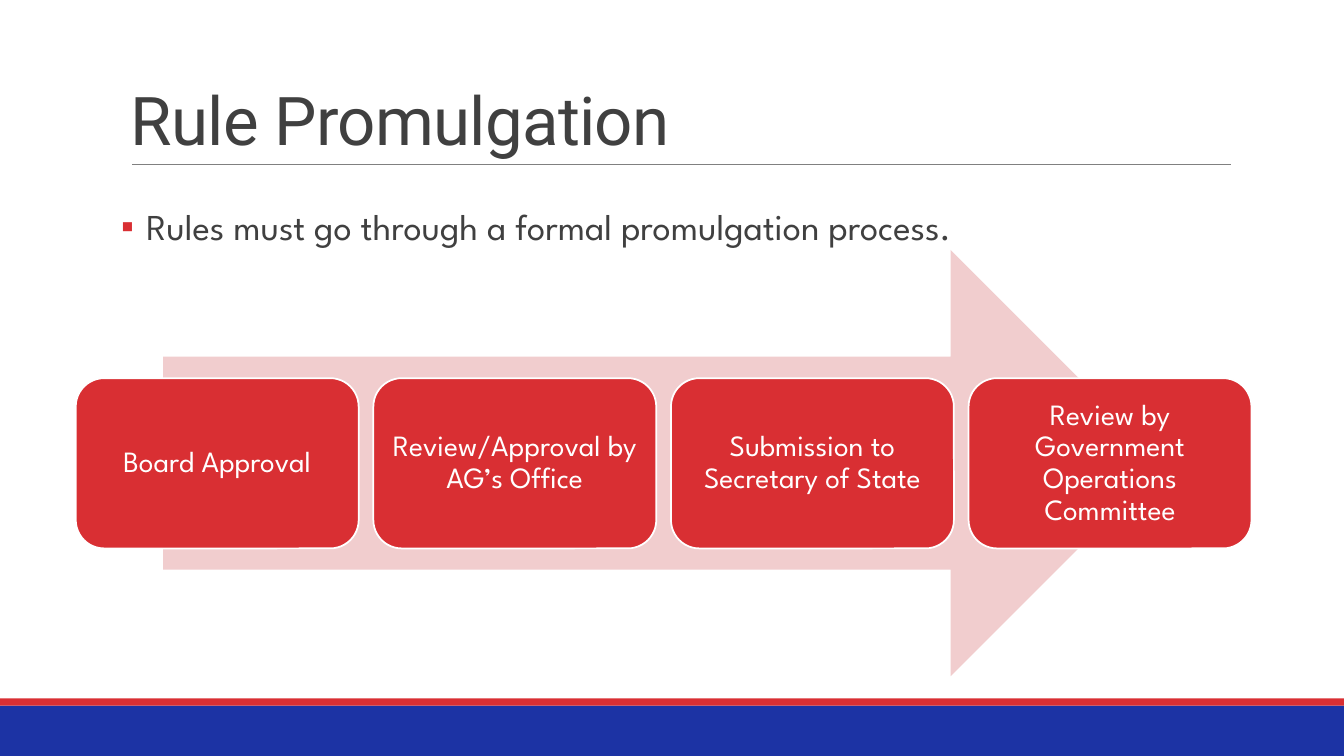
from dataclasses import dataclass

from lxml import etree
from pptx import Presentation
from pptx import util as u
from pptx.dml.color import RGBColor
from pptx.enum import shapes, text
from pptx.oxml import ns


@dataclass(frozen=True)
class Theme:
    """Colours, fonts and type sizes of the deck."""
    blue: str = "1C33A4"
    red: str = "D92F33"
    pale_red: str = "F1CDCE"
    grey: str = "808080"
    ink: str = "404040"
    white: str = "FFFFFF"
    heading_font: str = "Roboto"
    body_font: str = "League Spartan"
    title_size: float = 48
    body_size: float = 26
    step_size: float = 21


def write_text(shape, words, *, font, size, color, align=text.PP_ALIGN.LEFT,
               anchor=text.MSO_ANCHOR.TOP, spacing=0.9, before=0, after=0,
               inset=(0.25, 0.13), tracking=None):
    """Fill a shape with one formatted paragraph and return the paragraph."""
    frame = shape.text_frame
    frame.word_wrap = True
    frame.auto_size = text.MSO_AUTO_SIZE.NONE
    frame.vertical_anchor = anchor
    frame.margin_left = frame.margin_right = u.Cm(inset[0])
    frame.margin_top = frame.margin_bottom = u.Cm(inset[1])
    para = frame.paragraphs[0]
    para.alignment = align
    para.line_spacing = spacing
    para.space_before, para.space_after = u.Pt(before), u.Pt(after)
    span = para.add_run()
    span.text = words
    span.font.name, span.font.size = font, u.Pt(size)
    span.font.color.rgb = RGBColor.from_string(color)
    if tracking is not None:
        span.font._element.set("spc", str(round(tracking * 100)))
    return para


class SlideBuilder:
    """Draws elements on one page in the style of a theme; lengths in cm."""

    def __init__(self, page, theme):
        self.page = page
        self.theme = theme

    def place(self, shape, left, top, width, height):
        shape.left, shape.top = u.Cm(left), u.Cm(top)
        shape.width, shape.height = u.Cm(width), u.Cm(height)

    def title(self, words, *bounds):
        box = self.page.shapes.title
        self.place(box, *bounds)
        write_text(box, words, font=self.theme.heading_font,
                   size=self.theme.title_size, color=self.theme.ink,
                   anchor=text.MSO_ANCHOR.BOTTOM, spacing=0.85, tracking=-0.5)

    def bullet(self, words, *bounds):
        box = self.page.placeholders[1]
        self.place(box, *bounds)
        para = write_text(box, words, font=self.theme.body_font,
                          size=self.theme.body_size, color=self.theme.ink,
                          before=12, after=2, inset=(0, 0.13))
        # Red square bullet with a hanging indent
        props = para._p.get_or_add_pPr()
        indent = u.Cm(0.64)
        props.set("marL", str(indent))
        props.set("indent", str(-indent))
        color = etree.SubElement(props, ns.qn("a:buClr"))
        etree.SubElement(color, ns.qn("a:srgbClr"), val=self.theme.red)
        etree.SubElement(props, ns.qn("a:buChar"), char="▪")

    def shape(self, kind, *bounds, fill, outline=None):
        item = self.page.shapes.add_shape(kind, *map(u.Cm, bounds))
        item.shadow.inherit = False
        item.fill.solid()
        item.fill.fore_color.rgb = RGBColor.from_string(fill)
        if outline:
            item.line.color.rgb = RGBColor.from_string(outline)
            item.line.width = u.Pt(1.25)
        else:
            item.line.fill.background()
        return item

    def rule(self, left, right, top):
        line = self.page.shapes.add_connector(
            shapes.MSO_CONNECTOR.STRAIGHT, *map(u.Cm, (left, top, right, top)))
        line.line.color.rgb = RGBColor.from_string(self.theme.grey)
        line.line.width = u.Pt(0.5)
        etree.SubElement(line._element.spPr, ns.qn("a:effectLst"))

    def step(self, words, *bounds):
        box = self.shape(shapes.MSO_SHAPE.ROUNDED_RECTANGLE, *bounds,
                         fill=self.theme.red, outline=self.theme.white)
        write_text(box, words, font=self.theme.body_font,
                   size=self.theme.step_size, color=self.theme.white,
                   align=text.PP_ALIGN.CENTER, anchor=text.MSO_ANCHOR.MIDDLE,
                   inset=(0.23, 0.23))


def main():
    deck = Presentation()
    deck.slide_width, deck.slide_height = u.Cm(33.87), u.Cm(19.05)
    theme = Theme()
    builder = SlideBuilder(deck.slides.add_slide(deck.slide_layouts[1]), theme)

    # Footer bands and title rule
    rectangle = shapes.MSO_SHAPE.RECTANGLE
    builder.shape(rectangle, 0, 17.78, 33.87, 1.27, fill=theme.blue)
    builder.shape(rectangle, 0, 17.6, 33.87, 0.18, fill=theme.red)
    builder.rule(3.33, 31.01, 4.14)

    # Title and body
    builder.title("Rule Promulgation", 3.05, 0.1, 27.94, 4.04)
    builder.bullet("Rules must go through a formal promulgation process.",
                   3.05, 5.13, 27.94, 11.96)

    # Process arrow with its four steps
    builder.shape(shapes.MSO_SHAPE.RIGHT_ARROW, 4.11, 6.3, 25.22, 10.74,
                  fill=theme.pale_red)
    steps = ("Board Approval",
             "Review/Approval by AG’s Office",
             "Submission to Secretary of State",
             "Review by Government Operations Committee")
    width, gap = 7.13, 0.37
    for index, words in enumerate(steps):
        builder.step(words, 1.91 + index * (width + gap), 9.53, width, 4.29)

    deck.save("out.pptx")


if __name__ == "__main__":
    main()
